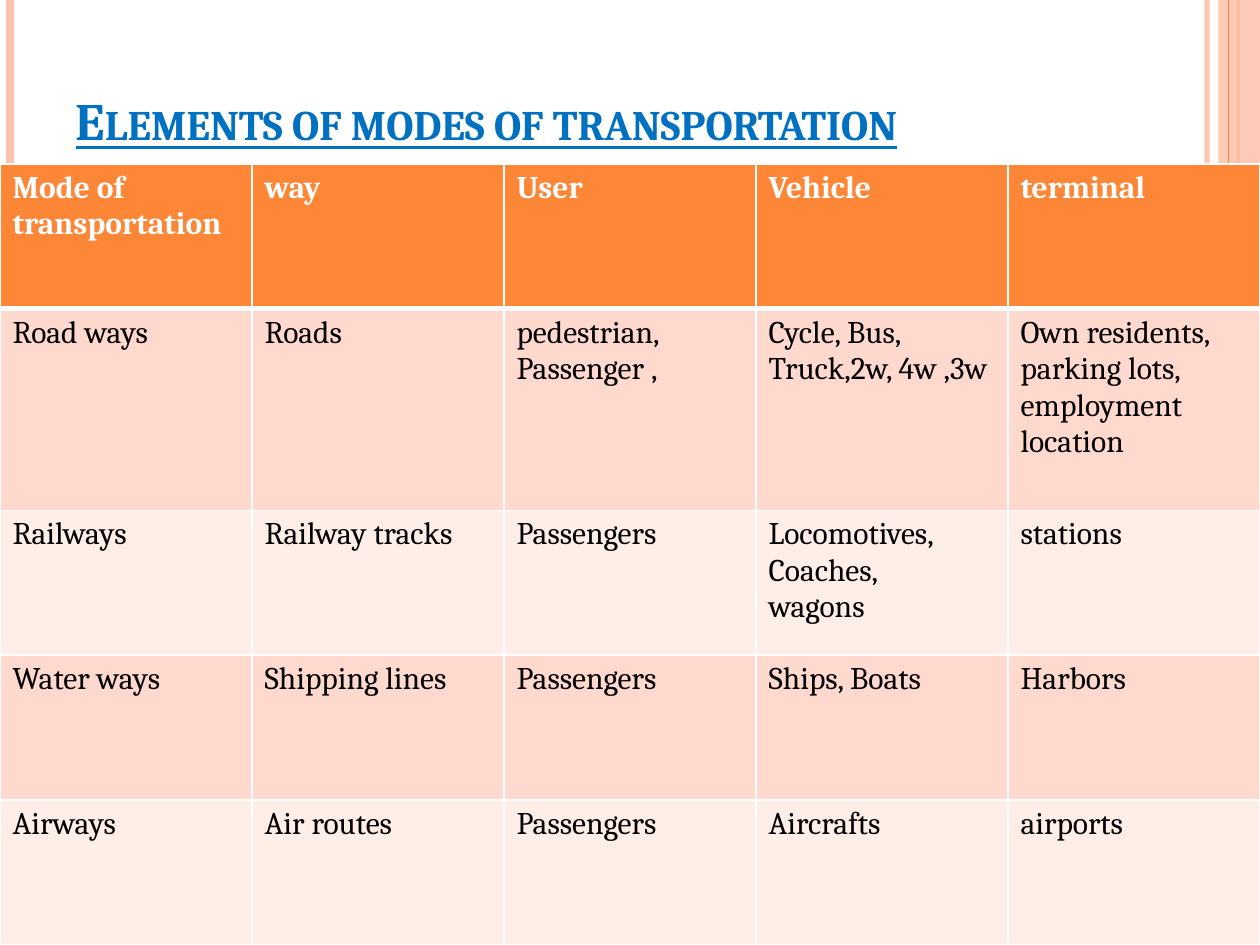
from dataclasses import dataclass

from lxml.etree import SubElement
from pptx import Presentation
from pptx.dml.color import RGBColor
from pptx.enum.shapes import MSO_CONNECTOR, MSO_SHAPE
from pptx.enum.text import MSO_ANCHOR, MSO_AUTO_SIZE, PP_ALIGN
from pptx.oxml.ns import qn
from pptx.util import Emu, Pt

PX_PER_INCH = 100
SLIDE_WIDTH, SLIDE_HEIGHT = 1000, 750


@dataclass(frozen=True)
class Theme:
    font: str = "Cambria"
    title_size: int = 30
    table_size: int = 18
    title: str = "0070C0"
    accent: str = "FE8637"
    pale: str = "FEC3AE"
    band_dark: str = "FFD9CE"
    band_light: str = "FFEDE8"
    white: str = "FFFFFF"
    black: str = "000000"


THEME = Theme()

TITLE = "Elements of modes of transportation"
MODES = [
    ["Mode of transportation", "way", "User", "Vehicle", "terminal"],
    ["Road ways", "Roads", "pedestrian,\nPassenger ,", "Cycle, Bus, Truck,2w, 4w ,3w",
     "Own residents, parking lots, employment location"],
    ["Railways", "Railway tracks", "Passengers", "Locomotives,\nCoaches,\nwagons", "stations"],
    ["Water ways", "Shipping lines", "Passengers", "Ships, Boats", "Harbors"],
    ["Airways", "Air routes", "Passengers", "Aircrafts", "airports"],
]
ROW_HEIGHTS = [115, 160, 115, 115, 115]


def px(length):
    return Emu(length * 914400 // PX_PER_INCH)


def rgb(color):
    return RGBColor.from_string(color)


def set_alpha(fill_parent, percent):
    color = next(fill_parent.iter(qn("a:srgbClr")))
    SubElement(color, qn("a:alpha"), val=str(percent * 1000))


def style_font(font, size, color, bold):
    font.name = THEME.font
    font.size = Pt(size)
    font.bold = bold
    font.color.rgb = rgb(color)


def add_rule(slide, x, top, height, color, weight, alpha=100):
    rule = slide.shapes.add_connector(
        MSO_CONNECTOR.STRAIGHT, px(x), px(top), px(x), px(top + height))
    rule.line.color.rgb = rgb(color)
    rule.line.width = Pt(weight)
    SubElement(rule._element.spPr, qn("a:effectLst"))
    if alpha < 100:
        set_alpha(rule._element.spPr, alpha)


def add_side_rails(slide, left, top, width, height):
    """Draw the vertical rules at both edges and the translucent right band."""
    right = left + width
    add_rule(slide, right - 42, top, height, THEME.pale, 3, alpha=93)
    add_rule(slide, left + 8, top, height, THEME.pale, 4.5)
    add_rule(slide, right - 17, top, height, THEME.accent, 1.5)
    band = slide.shapes.add_shape(
        MSO_SHAPE.RECTANGLE, px(right - 33), px(top), px(33), px(height))
    band.shadow.inherit = False
    band.fill.solid()
    band.fill.fore_color.rgb = rgb(THEME.pale)
    band.line.fill.background()
    set_alpha(band._element.spPr, 87)
    add_rule(slide, right - 25, top, height, THEME.accent, 0.75)


def place_title(slide, left, top, width, height):
    title = slide.shapes.title
    title.left, title.top, title.width, title.height = map(px, (left, top, width, height))
    frame = title.text_frame
    frame.text = TITLE
    frame.auto_size = MSO_AUTO_SIZE.NONE
    frame.vertical_anchor = MSO_ANCHOR.BOTTOM
    heading = frame.paragraphs[0]
    heading.alignment = PP_ALIGN.LEFT
    run = heading.runs[0]
    style_font(run.font, THEME.title_size, THEME.title, True)
    run.font.underline = True
    run._r.get_or_add_rPr().set("cap", "small")


def set_borders(cell, bottom_weight, top_weight):
    weights = {"a:lnL": 1, "a:lnR": 1, "a:lnT": top_weight, "a:lnB": bottom_weight}
    properties = cell._tc.get_or_add_tcPr()
    for position, (side, weight) in enumerate(weights.items()):
        border = SubElement(properties, qn(side), w=str(Pt(weight)))
        fill = SubElement(border, qn("a:solidFill"))
        SubElement(fill, qn("a:srgbClr"), val=THEME.white)
        properties.insert(position, border)


def fill_cell(cell, content, row):
    is_header = row == 0
    bands = (THEME.band_light, THEME.band_dark)
    cell.fill.solid()
    cell.fill.fore_color.rgb = rgb(THEME.accent if is_header else bands[row % 2])
    set_borders(cell, bottom_weight=3 if is_header else 1, top_weight=3 if row == 1 else 1)
    cell.text_frame.text = content
    for paragraph in cell.text_frame.paragraphs:
        for run in paragraph.runs:
            style_font(run.font, THEME.table_size,
                       THEME.white if is_header else THEME.black, is_header)


def add_modes_table(slide, left, top, width):
    columns = len(MODES[0])
    table = slide.shapes.add_table(
        len(MODES), columns, px(left), px(top), px(width), px(sum(ROW_HEIGHTS))).table
    for column in table.columns:
        column.width = px(width // columns)
    for row, (height, contents) in enumerate(zip(ROW_HEIGHTS, MODES)):
        table.rows[row].height = px(height)
        for column, content in enumerate(contents):
            fill_cell(table.cell(row, column), content, row)


def main():
    deck = Presentation()
    deck.slide_width, deck.slide_height = px(SLIDE_WIDTH), px(SLIDE_HEIGHT)
    slide = deck.slides.add_slide(deck.slide_layouts.get_by_name("Title Only"))
    add_side_rails(slide, 0, 0, SLIDE_WIDTH, SLIDE_HEIGHT)
    place_title(slide, 50, 0, 817, 125)
    add_modes_table(slide, 0, 130, SLIDE_WIDTH)
    deck.save("out.pptx")


if __name__ == "__main__":
    main()
